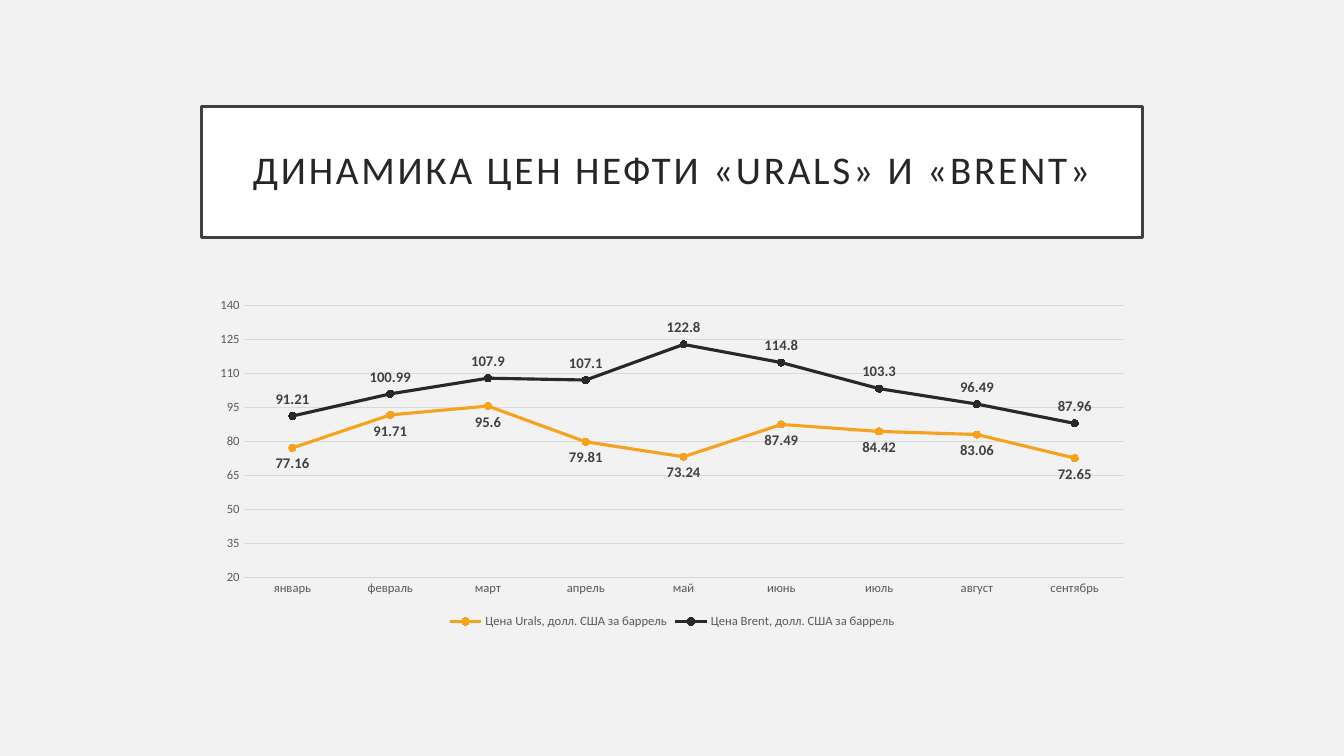
import pptx
import pptx.chart.data
import pptx.dml.color
import pptx.enum.chart
import pptx.enum.text
import pptx.util

Cm = pptx.util.Cm
Pt = pptx.util.Pt
XL = pptx.enum.chart

FONT = "Calibri"
GRID = "D9D9D9"
AXIS_FONT = {"name": FONT, "size": Pt(9), "color": "595959"}
LABEL_FONT = {"name": FONT, "size": Pt(10.5), "bold": True, "color": "404040"}
TITLE_FONT = {"name": FONT, "size": Pt(28), "color": "262626"}

MONTHS = ["январь", "февраль", "март", "апрель", "май", "июнь", "июль",
          "август", "сентябрь"]
# Name, colour, label position, prices by month
PRICES = [
    ("Цена Urals, долл. США за баррель", "F6A21D", XL.XL_LABEL_POSITION.BELOW,
     [77.16, 91.71, 95.6, 79.81, 73.24, 87.49, 84.42, 83.06, 72.65]),
    ("Цена Brent, долл. США за баррель", "25292B", XL.XL_LABEL_POSITION.ABOVE,
     [91.21, 100.99, 107.9, 107.1, 122.8, 114.8, 103.3, 96.49, 87.96]),
]


def rgb(value):
    return pptx.dml.color.RGBColor.from_string(value)


def set_attrs(obj, values):
    for name, value in values.items():
        setattr(obj, name, value)


def set_font(font, values):
    set_attrs(font, {k: v for k, v in values.items() if k != "color"})
    font.color.rgb = rgb(values["color"])


def set_fill(fill, color):
    fill.solid()
    fill.fore_color.rgb = rgb(color)


def set_line(line, color, width):
    set_fill(line.fill, color)
    line.width = Pt(width)


def add_title(s, text, left, top, width, height):
    sp = s.shapes.title
    set_attrs(sp, {"left": left, "top": top, "width": width, "height": height})
    set_fill(sp.fill, "FFFFFF")
    set_line(sp.line, "404040", 2.5)

    tf = sp.text_frame
    set_attrs(tf, {"word_wrap": True,
                   "auto_size": pptx.enum.text.MSO_AUTO_SIZE.NONE,
                   "vertical_anchor": pptx.enum.text.MSO_ANCHOR.MIDDLE})
    set_attrs(tf, {f"margin_{side}": Cm(0.51)
                   for side in ("left", "top", "right", "bottom")})
    p = tf.paragraphs[0]
    set_attrs(p, {"alignment": pptx.enum.text.PP_ALIGN.CENTER,
                  "line_spacing": 0.9})
    r = p.add_run()
    r.text = text
    set_font(r.font, TITLE_FONT)
    r.font._element.set("spc", "200")


def format_series(series, color, position):
    series.smooth = False
    set_line(series.format.line, color, 2.25)
    # Markers
    marker = series.marker
    set_attrs(marker, {"style": XL.XL_MARKER_STYLE.CIRCLE, "size": 5})
    set_fill(marker.format.fill, color)
    set_line(marker.format.line, color, 0.75)
    # Value labels
    labels = series.data_labels
    set_attrs(labels, {"show_value": True, "position": position})
    set_font(labels.font, LABEL_FONT)


def add_price_chart(s, left, top, width, height):
    data = pptx.chart.data.CategoryChartData()
    data.categories = MONTHS
    for name, _, _, values in PRICES:
        data.add_series(name, values)
    chart = s.shapes.add_chart(XL.XL_CHART_TYPE.LINE_MARKERS, left, top,
                               width, height, data).chart
    chart.has_title = False
    set_font(chart.font, {"name": FONT, "size": Pt(10), "color": "000000"})
    chart.plots[0].vary_by_categories = False
    for series, (_, color, position, _) in zip(chart.plots[0].series, PRICES):
        format_series(series, color, position)

    # Axes
    for axis in (chart.category_axis, chart.value_axis):
        set_attrs(axis, {"major_tick_mark": XL.XL_TICK_MARK.NONE,
                         "minor_tick_mark": XL.XL_TICK_MARK.NONE})
        set_font(axis.tick_labels.font, AXIS_FONT)
    set_line(chart.category_axis.format.line, GRID, 0.75)
    axis = chart.value_axis
    set_attrs(axis, {"minimum_scale": 20, "maximum_scale": 140,
                     "major_unit": 15, "has_major_gridlines": True})
    axis.format.line.fill.background()
    set_line(axis.major_gridlines.format.line, GRID, 0.75)

    # Legend
    chart.has_legend = True
    set_attrs(chart.legend, {"position": XL.XL_LEGEND_POSITION.BOTTOM,
                             "include_in_layout": False})
    set_font(chart.legend.font, AXIS_FONT)


def main():
    prs = pptx.Presentation()
    set_attrs(prs, {"slide_width": Cm(33.87), "slide_height": Cm(19.05)})
    s = prs.slides.add_slide(prs.slide_layouts.get_by_name("Title Only"))
    set_fill(s.background.fill, "F2F2F2")

    # Title and chart share one centred column
    width = Cm(23.71)
    left = (prs.slide_width - width) // 2
    add_title(s, "ДИНАМИКА ЦЕН НЕФТИ «URALS» И «BRENT»",
              left, Cm(2.69), width, Cm(3.3))
    add_price_chart(s, left, Cm(7.34), width, Cm(8.61))
    prs.save("out.pptx")


if __name__ == "__main__":
    main()
